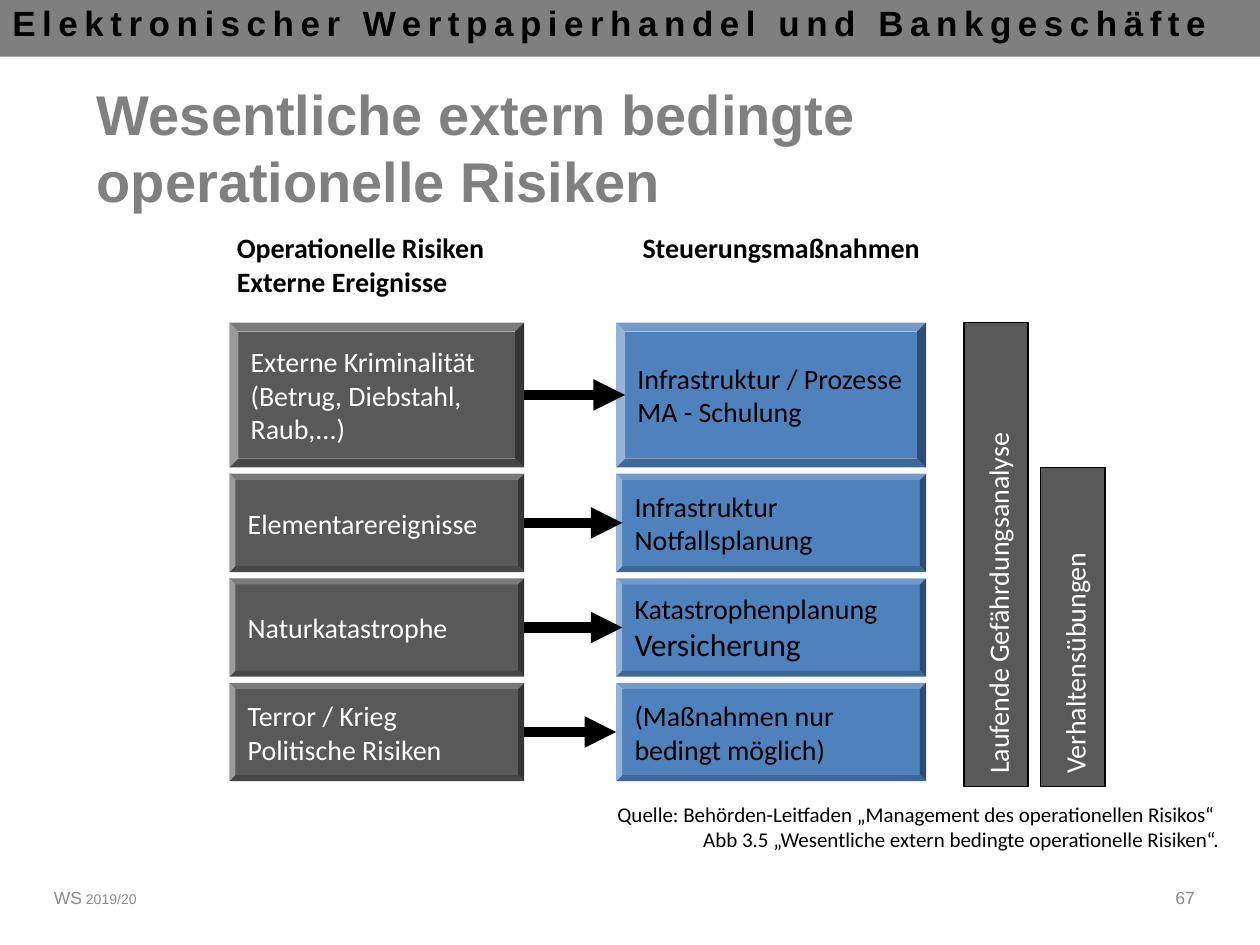
from lxml import etree
from pptx import Presentation
from pptx.dml.color import RGBColor
from pptx.enum.shapes import MSO_CONNECTOR as CONN, MSO_SHAPE as SHAPE
from pptx.enum.text import MSO_ANCHOR as ANCHOR, PP_ALIGN as ALIGN
from pptx.oxml.ns import qn
from pptx.util import Inches, Pt

DARK, BLUE, BLACK, WHITE = "595959", "4F81BD", "000000", "FFFFFF"
INSETS = (0.1, 0.05, 0.1, 0.05)
LABEL_INSETS = (0.07, 0, 0.07, 0)

# Height, risk lines, measure lines, reach of the arrow into the measure
ROWS = [
    (1.15, ["Externe Kriminalität", "(Betrug, Diebstahl, Raub,...)"],
     ["Infrastruktur / Prozesse", "MA - Schulung"], 0.07),
    (0.78, ["Elementarereignisse"], ["Infrastruktur", "Notfallsplanung"], 0.05),
    (0.78, ["Naturkatastrophe"], ["Katastrophenplanung", ("Versicherung", 18)], 0.05),
    (0.78, ["Terror / Krieg", "Politische Risiken"],
     ["(Maßnahmen nur", "bedingt möglich)"], 0),
]


def rgb(value):
    return RGBColor.from_string(value)


def write(sp, lines, size, color, font="Calibri", bold=False, align=ALIGN.LEFT,
          anchor=ANCHOR.TOP, insets=INSETS):
    """Write one paragraph per line; a line may be (text, size)."""
    tf = sp.text_frame
    tf.word_wrap = True
    tf.vertical_anchor = anchor
    tf.margin_left, tf.margin_top, tf.margin_right, tf.margin_bottom = map(Inches, insets)
    for i, line in enumerate(lines):
        text, line_size = line if isinstance(line, tuple) else (line, size)
        p = tf.add_paragraph() if i else tf.paragraphs[0]
        p.alignment = align
        for j, part in enumerate(text.split("\n")):
            if j:
                p.add_line_break()
            r = p.add_run()
            r.text = part
            r.font.name, r.font.size, r.font.bold = font, Pt(line_size), bold
            r.font.color.rgb = rgb(color)
    return tf


def add_text(slide, box, lines, size, color, **style):
    sp = slide.shapes.add_textbox(*map(Inches, box))
    return write(sp, lines, size, color, **style)


def add_block(slide, kind, box, fill, line=None):
    sp = slide.shapes.add_shape(kind, *map(Inches, box))
    sp.shadow.inherit = False
    sp.fill.solid()
    sp.fill.fore_color.rgb = rgb(fill)
    if line:
        sp.line.color.rgb = rgb(line)
        sp.line.width = Pt(0.75)
    else:
        sp.line.fill.background()
    return sp


def add_bevel(slide, box, fill, lines, color):
    sp = add_block(slide, SHAPE.BEVEL, box, fill)
    sp.adjustments[0] = 0.062
    write(sp, lines, 16, color, anchor=ANCHOR.MIDDLE)


def add_arrow(slide, x1, x2, y):
    cx = slide.shapes.add_connector(CONN.STRAIGHT, *map(Inches, (x1, y, x2, y)))
    cx.line.color.rgb = rgb(BLACK)
    cx.line.width = Pt(6)
    etree.SubElement(cx.line._get_or_add_ln(), qn("a:tailEnd"), type="triangle")
    etree.SubElement(cx._element.spPr, qn("a:effectLst"))


def add_bar(slide, box, text):
    """Bar whose text reads upwards from its foot."""
    sp = add_block(slide, SHAPE.FLOWCHART_PROCESS, box, DARK, BLACK)
    tf = write(sp, [text], 16, WHITE, anchor=ANCHOR.MIDDLE, insets=(0.05, 0.05, 0.05, 0.05))
    tf._txBody.bodyPr.set("vert", "vert270")
    tf.paragraphs[0].line_spacing = 1.1


def add_banner(slide, box):
    x, y, w, h = box
    add_block(slide, SHAPE.RECTANGLE, box, "7F7F7F")
    tf = add_text(slide, (0, y, w - 0.14, h - 0.05),
                  ["Elektronischer Wertpapierhandel und Bankgeschäfte"],
                  20, BLACK, font="Arial", bold=True, align=ALIGN.JUSTIFY)
    tf.paragraphs[0].runs[0].font._element.set("spc", "370")


def add_footer(slide, box):
    x, y, w, h = box
    style = dict(font="Arial", anchor=ANCHOR.MIDDLE)
    tf = add_text(slide, (x, y, 2.75, h), ["WS 2019/20"], 10, "8C8C8C", **style)
    tf.paragraphs[0].runs[0].font._element.set("cap", "small")
    add_text(slide, (x + w - 3.25, y, 3.25, h), ["67"], 10, "8C8C8C",
             align=ALIGN.RIGHT, **style)


def add_risk_chart(slide, box):
    x, y, w, h = box
    risk_w, measure_w, bar_w, gap = 2.34, 2.46, 0.51, 0.05
    measure_x = x + 3.07

    # Column headings
    for left, lines in ((x - 0.01, ["Operationelle Risiken", "Externe Ereignisse"]),
                        (measure_x + 0.14, ["Steuerungsmaßnahmen"])):
        add_text(slide, (left, y - 0.73, 2.67, 0.53), lines, 16, BLACK,
                 bold=True, insets=LABEL_INSETS)

    # Risk, measure and the arrow between them
    top = y
    for row_h, risk, measure, reach in ROWS:
        add_bevel(slide, (measure_x, top, measure_w, row_h), BLUE, measure, BLACK)
        add_arrow(slide, x + risk_w, measure_x + reach, top + row_h / 2)
        add_bevel(slide, (x, top, risk_w, row_h), DARK, risk, WHITE)
        top += row_h + gap

    # Bars that span several rows, aligned at the foot
    bars = ((h, "Laufende Gefährdungsanalyse"), (h - ROWS[0][0], "Verhaltensübungen"))
    for i, (bar_h, text) in enumerate(bars):
        left = x + w - bar_w - (len(bars) - 1 - i) * (bar_w + 0.1)
        add_bar(slide, (left, y + h - bar_h, bar_w, bar_h), text)


def main():
    prs = Presentation()
    prs.slide_width, prs.slide_height = Inches(10), Inches(7.5)
    slide = prs.slides.add_slide(prs.slide_layouts[6])

    add_footer(slide, (0.33, 6.92, 9.25, 0.4))
    add_banner(slide, (-0.02, -0.04, 10.02, 0.49))
    add_text(slide, (0.67, 0.75, 8.92, 0.83),
             ["Wesentliche extern bedingte operationelle Risiken"],
             32, "808080", font="Arial", bold=True, anchor=ANCHOR.MIDDLE)
    add_risk_chart(slide, (1.82, 2.56, 6.95, 3.68))
    # Source note
    add_text(slide, (1.17, 6.36, 8.58, 0.4),
             ["Quelle: Behörden-Leitfaden „Management des operationellen Risikos“ \n"
              "Abb 3.5 „Wesentliche extern bedingte operationelle Risiken“."],
             12, BLACK, align=ALIGN.RIGHT, insets=LABEL_INSETS)

    prs.save("out.pptx")


if __name__ == "__main__":
    main()
